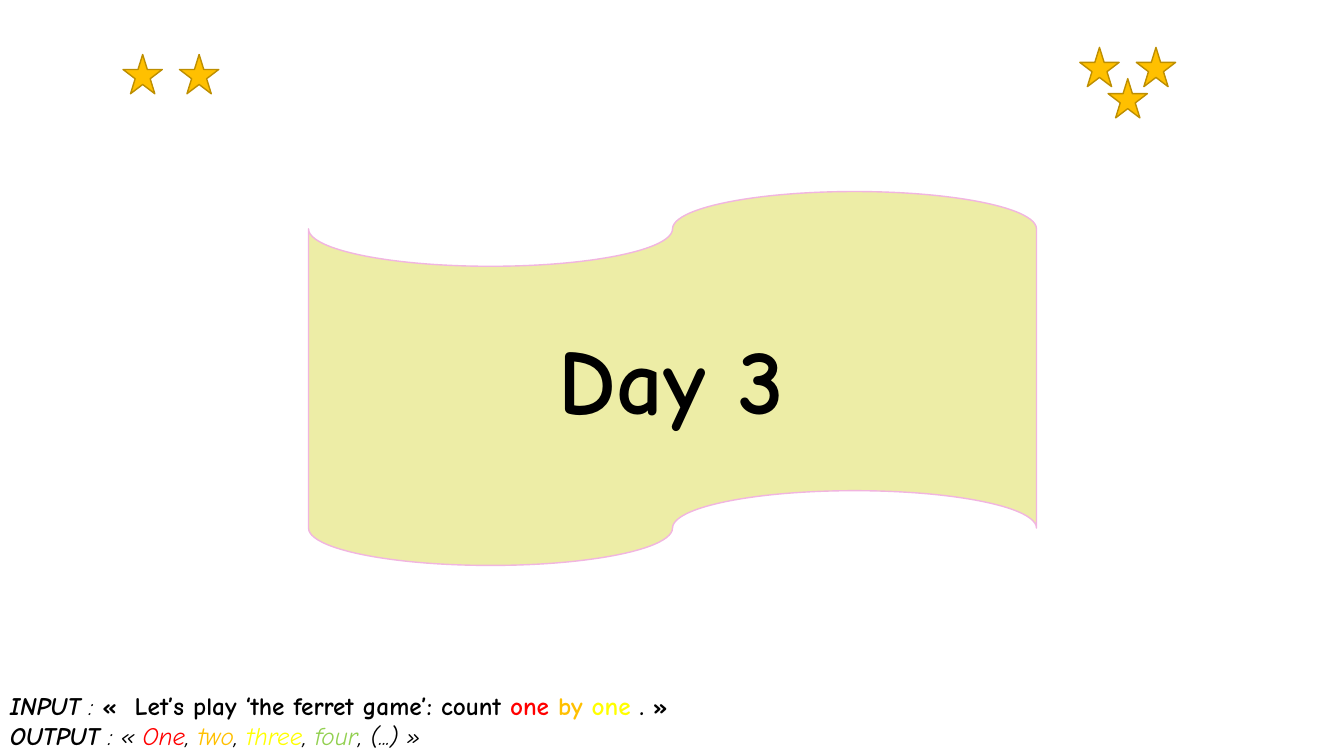
"""Build the Day 3 title slide with its ribbon, stars and classroom script."""
from dataclasses import dataclass
from pptx import Presentation
from pptx.dml.color import RGBColor
from pptx.enum.shapes import MSO_SHAPE
from pptx.enum.text import MSO_ANCHOR, PP_ALIGN
from pptx.util import Inches, Pt


@dataclass
class Theme:
    font: str = "Comic Neue"
    title: int = 66
    body: int = 18
    edge: int = 1
    black: str = "000000"
    red: str = "FF0000"
    gold: str = "FFC000"
    yellow: str = "FFFF00"
    green: str = "92D050"
    rim: str = "BD8E00"
    paper: str = "EDEDA6"
    pink: str = "F1B5E0"


theme = Theme()
TITLE = "Day 3"
RIBBON = (3.06, 1.9, 7.22, 3.71)
LABEL = (3.23, 3.14, 6.86, 1.21)
FOOTER = (0, 6.8, 13.33, 0.71)
STAR = 0.39
STEP = 0.56
PAIRS = [(1.22, 0.54), (10.71, 0.47)]
LOW = (10.99, 0.78)
BOLD, ITALIC, BOTH = (True, False), (False, True), (True, True)
LINES = [
    [
        ("INPUT", BOTH, theme.black),
        (" :", ITALIC, theme.black),
        (" «  Let’s play ‘the ferret game’: count ", BOLD, theme.black),
        ("one ", BOLD, theme.red),
        ("by ", BOLD, theme.gold),
        ("one", BOLD, theme.yellow),
        (" . »", BOLD, theme.black),
    ],
    [
        ("OUTPUT", BOTH, theme.black),
        (" : « ", ITALIC, theme.black),
        ("One", ITALIC, theme.red),
        (", ", ITALIC, theme.black),
        ("two", ITALIC, theme.gold),
        (", ", ITALIC, theme.black),
        ("three", ITALIC, theme.yellow),
        (", ", ITALIC, theme.black),
        ("four", ITALIC, theme.green),
        (", (...) »", ITALIC, theme.black),
    ],
]


def draw(shapes, kind, box, fill, line=None):
    shape = shapes.add_shape(kind, *map(Inches, box))
    shape.shadow.inherit = False
    shape.fill.solid()
    shape.fill.fore_color.rgb = RGBColor.from_string(fill)
    if line:
        shape.line.color.rgb = RGBColor.from_string(line)
        shape.line.width = Pt(theme.edge)
    else:
        shape.line.fill.background()
    return shape


def style(para, size):
    para.font.name = theme.font
    para.font.size = Pt(size)


def add_ribbon(slide):
    group = slide.shapes.add_group_shape()
    draw(group.shapes, MSO_SHAPE.FLOWCHART_PUNCHED_TAPE, RIBBON,
         theme.paper, theme.pink)
    label = draw(group.shapes, MSO_SHAPE.RECTANGLE, LABEL, theme.paper)
    frame = label.text_frame
    frame.word_wrap = True
    frame.vertical_anchor = MSO_ANCHOR.MIDDLE
    para = frame.paragraphs[0]
    para.text = TITLE
    para.alignment = PP_ALIGN.CENTER
    style(para, theme.title)
    para.font.bold = True
    para.font.color.rgb = RGBColor.from_string(theme.black)


def add_stars(slide):
    spots = [(x + i * STEP, y) for x, y in PAIRS for i in range(2)]
    for x, y in spots + [LOW]:
        draw(slide.shapes, MSO_SHAPE.STAR_5_POINT, (x, y, STAR, STAR),
             theme.gold, theme.rim)


def add_footer(slide):
    frame = slide.shapes.add_textbox(*map(Inches, FOOTER)).text_frame
    frame.word_wrap = True
    for i, line in enumerate(LINES):
        para = frame.add_paragraph() if i else frame.paragraphs[0]
        style(para, theme.body)
        for text, (bold, italic), color in line:
            run = para.add_run()
            run.text = text
            run.font.bold = bold
            run.font.italic = italic
            run.font.color.rgb = RGBColor.from_string(color)


def main():
    deck = Presentation()
    deck.slide_width, deck.slide_height = Inches(13.33), Inches(7.5)
    slide = deck.slides.add_slide(deck.slide_layouts[6])
    add_ribbon(slide)
    add_stars(slide)
    add_footer(slide)
    deck.save("out.pptx")


if __name__ == "__main__":
    main()
